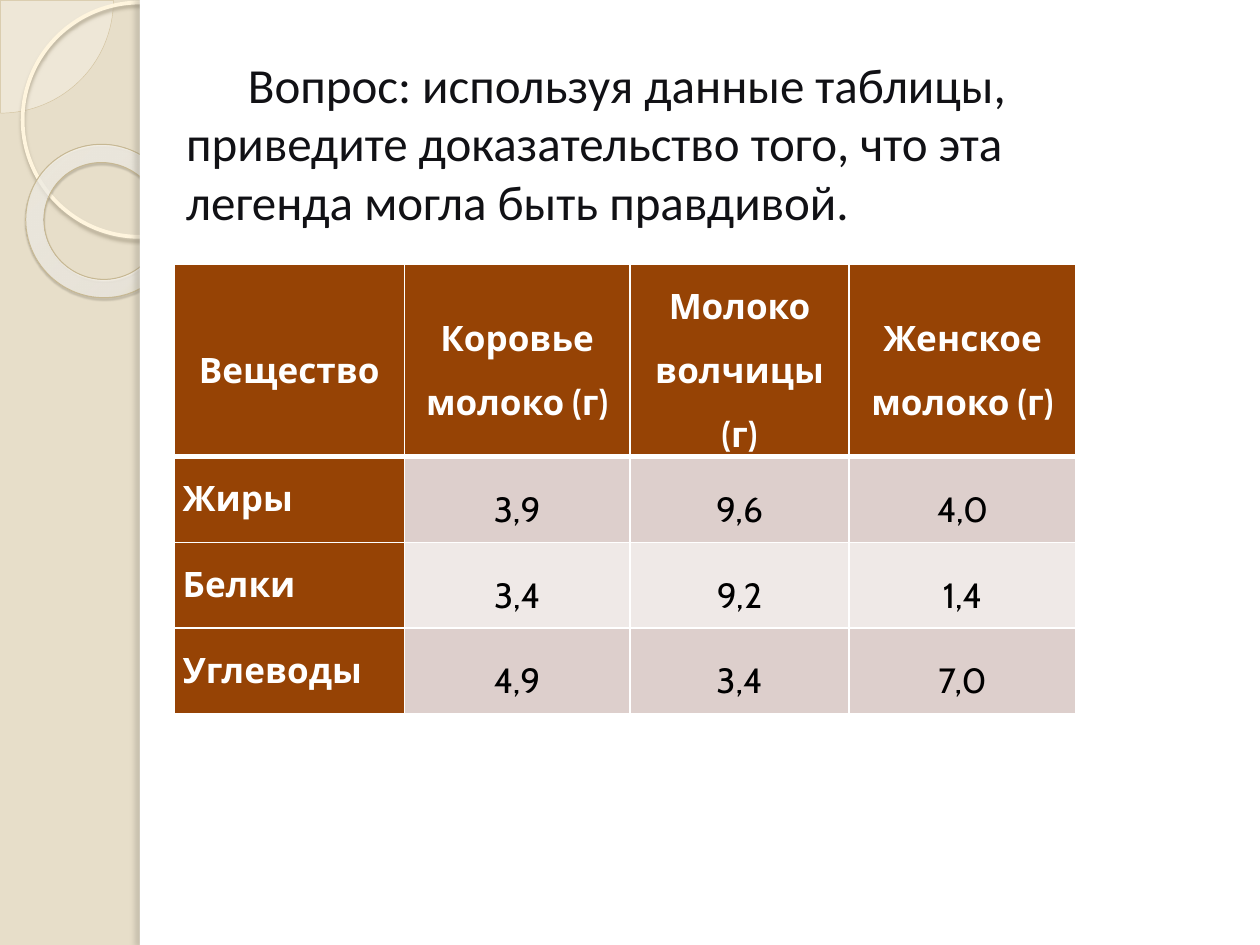
"""Slide comparing the make-up of cow, wolf and human milk in a table."""
from lxml.etree import SubElement
from pptx import Presentation
from pptx.dml.color import RGBColor as RGB
from pptx.enum.shapes import MSO_SHAPE as SHAPE
from pptx.enum.text import MSO_ANCHOR as ANCHOR, PP_ALIGN as ALIGN
from pptx.oxml.ns import qn
from pptx.util import Inches, Pt

COLORS = {
    "sand": "E7DEC9", "white": "FFFFFF", "ink": "111115", "black": "000000",
    "pie": "FEFAF4", "pie_line": "D3C39F", "circle_line": "FFF5DE",
    "circle_shadow": "B0A68F", "ring_line": "C7B893", "ring_shadow": "5A5444",
    "ring_in": "FFFCF6", "ring_mid": "FFFEFB", "ring_out": "F0D28E",
    "edge_shadow": "736F63", "brown": "964305", "rose": "DDCFCC", "pale": "EFE9E7",
}

prs = Presentation()
prs.slide_width, prs.slide_height = Inches(10), Inches(7.5)
s = prs.slides.add_slide(prs.slide_layouts[6])
s.background.fill.solid()
s.background.fill.fore_color.rgb = RGB.from_string(COLORS["sand"])


def place(left, top, width, height):
    w, h = prs.slide_width / 100, prs.slide_height / 100
    return [round(v) for v in (left * w, top * h, width * w, height * h)]


def child(parent, tag, **attrs):
    return SubElement(parent, qn(tag), {k: str(v) for k, v in attrs.items()})


decor = [
    (SHAPE.PIE, (-8.9, -11.9, 17.9, 23.87), 0, [0, 54.02], "pie", ("pie_line", 0.25), None),
    (SHAPE.OVAL, (1.8, 0.27, 18.6, 24.8), 0, [], None, ("circle_line", 2.15),
     ("circle_shadow", 85, 2, 2, 90)),
    (SHAPE.DONUT, (2, 15.33, 12.3, 16.13), 38.6, [0.12], "ring", ("ring_line", 0.58),
     ("ring_shadow", 35, 1, 1.2, 75)),
    (SHAPE.RECTANGLE, (11.1, 0, 88.9, 100), 0, [], "white", None, None),
    (SHAPE.RECTANGLE, (11.1, 0, 0.8, 100), 0, [], "white", None,
     ("edge_shadow", 25, 3, 3, 180)),
]
ring_stops = [(0, "ring_in", 70), (70, "ring_mid", 55), (100, "ring_out", 60)]

for kind, area, turn, adjust, fill, line, shadow in decor:
    sp = s.shapes.add_shape(kind, *place(*area))
    sp.rotation = turn
    sp.shadow.inherit = False
    props = sp._element.spPr
    for i, value in enumerate(adjust):
        sp.adjustments[i] = value
    if fill == "ring":
        sp.fill.gradient()
        grad = props.find(qn("a:gradFill"))
        grad.clear()
        stops = child(grad, "a:gsLst")
        for pos, name, alpha in ring_stops:
            stop = child(stops, "a:gs", pos=pos * 1000)
            color = child(stop, "a:srgbClr", val=COLORS[name])
            child(color, "a:alpha", val=alpha * 1000)
        radial = child(grad, "a:path", path="circle")
        child(radial, "a:fillToRect", l=-408000, t=-50000, r=508000, b=150000)
    elif fill:
        sp.fill.solid()
        sp.fill.fore_color.rgb = RGB.from_string(COLORS[fill])
        if fill == "pie":
            child(props.find(qn("a:solidFill"))[0], "a:alpha", val=33000)
    else:
        sp.fill.background()
    if line:
        sp.line.color.rgb = RGB.from_string(COLORS[line[0]])
        sp.line.width = Pt(line[1])
    else:
        sp.line.fill.background()
    if shadow:
        name, alpha, blur, dist, angle = shadow
        outer = child(props.find(qn("a:effectLst")), "a:outerShdw", blurRad=Pt(blur),
                      dist=Pt(dist), dir=angle * 60000, algn="tl", rotWithShape=0)
        color = child(outer, "a:srgbClr", val=COLORS[name])
        child(color, "a:alpha", val=alpha * 1000)

rows = [
    ("Вещество", "Коровье молоко (г)", "Молоко волчицы (г)", "Женское молоко (г)"),
    ("Жиры", "3,9", "9,6", "4,0"),
    ("Белки", "3,4", "9,2", "1,4"),
    ("Углеводы", "4,9", "3,4", "7,0"),
]
table = s.shapes.add_table(4, 4, *place(13.8, 28, 71.6, 45.2)).table
table.horz_banding = table.first_row = False
for column, share in zip(table.columns, (18.3, 17.9, 17.4, 18)):
    column.width = round(prs.slide_width * share / 100)
for row, share in zip(table.rows, (18, 9.07, 9.07, 9.07)):
    row.height = round(prs.slide_height * share / 100)

for r_no, row in enumerate(rows):
    for c_no, text in enumerate(row):
        cell = table.cell(r_no, c_no)
        heading = r_no == 0 or c_no == 0
        label = r_no > 0 and c_no == 0
        thick = {"a:lnB": r_no == 0, "a:lnT": r_no == 1}
        for side in ("a:lnL", "a:lnR", "a:lnT", "a:lnB"):
            edge = child(cell._tc.get_or_add_tcPr(), side, w=Pt(3 if thick.get(side) else 1))
            child(child(edge, "a:solidFill"), "a:srgbClr", val=COLORS["white"])
        cell.fill.solid()
        shade = "brown" if heading else "rose" if r_no % 2 else "pale"
        cell.fill.fore_color.rgb = RGB.from_string(COLORS[shade])
        cell.margin_left = cell.margin_right = Inches(0.07)
        cell.margin_top = cell.margin_bottom = 0
        cell.vertical_anchor = ANCHOR.TOP if label else ANCHOR.MIDDLE
        p = cell.text_frame.paragraphs[0]
        p.alignment = ALIGN.LEFT if label else ALIGN.CENTER
        p.line_spacing = 1.5
        r = p.add_run()
        r.text = text
        r.font.name, r.font.size, r.font.bold = "Cabin", Pt(20), heading
        r.font.color.rgb = RGB.from_string(COLORS["white" if heading else "black"])

tf = s.shapes.add_textbox(*place(13.8, 5.07, 74, 24.27)).text_frame
tf.word_wrap = True
tf.vertical_anchor = ANCHOR.TOP
p = tf.paragraphs[0]
p._p.get_or_add_pPr().set("indent", str(Inches(0.49)))
r = p.add_run()
r.text = ("Вопрос: используя данные таблицы, приведите доказательство того, "
          "что эта легенда могла быть правдивой.")
r.font.name, r.font.size = "Calibri", Pt(28)
r.font.color.rgb = RGB.from_string(COLORS["ink"])

prs.save("out.pptx")
